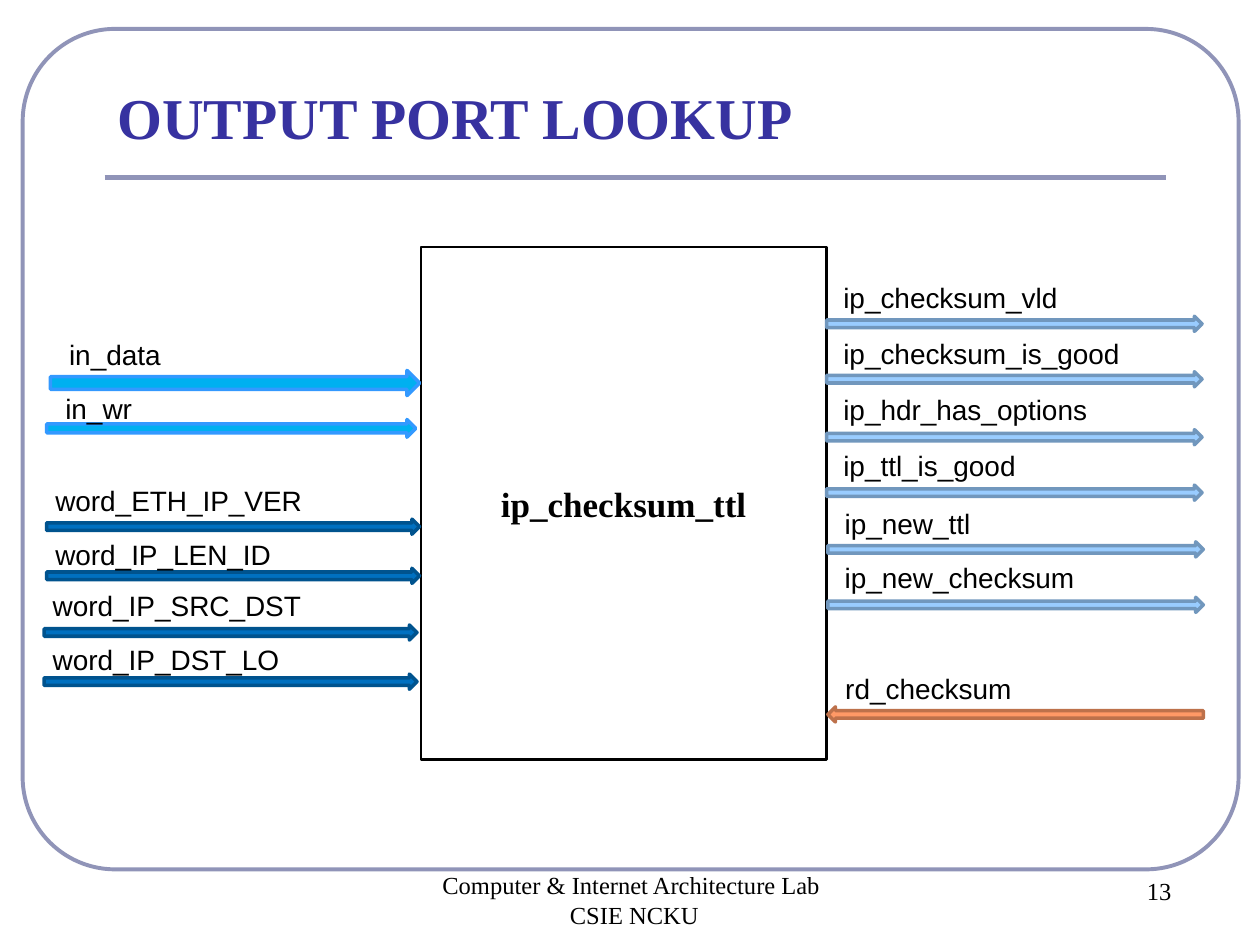
from dataclasses import dataclass

from pptx import Presentation
from pptx.dml.color import RGBColor
from pptx.enum.shapes import MSO_CONNECTOR, MSO_SHAPE
from pptx.enum.text import MSO_ANCHOR as Anchor, MSO_AUTO_SIZE as AutoSize, PP_ALIGN as Align
from pptx.oxml.ns import qn
from pptx.util import Inches, Pt
from lxml.etree import SubElement

# The slide is a grid of 100 columns by 75 rows of square cells.
CELL = Inches(0.1)
COLUMNS, ROWS = 100, 75

BLACK = RGBColor(0x00, 0x00, 0x00)
WHITE = RGBColor(0xFF, 0xFF, 0xFF)
FRAME = RGBColor(0x90, 0x94, 0xB8)
TITLE = RGBColor(0x37, 0x32, 0xA0)
SKY, SKY_EDGE = RGBColor(0x00, 0xB0, 0xF0), RGBColor(0x33, 0x99, 0xFF)
BLUE, BLUE_EDGE = RGBColor(0x00, 0x70, 0xC0), RGBColor(0x00, 0x53, 0x8E)
PALE, PALE_EDGE = RGBColor(0x99, 0xCC, 0xFF), RGBColor(0x71, 0x97, 0xBD)
ORANGE, ORANGE_EDGE = RGBColor(0xFF, 0x99, 0x66), RGBColor(0xBD, 0x71, 0x4B)

SERIF, SANS = "Times New Roman", "Arial"
TITLE_FONT = {"name": SERIF, "size": Pt(33), "bold": True}
MODULE_FONT = {"name": SERIF, "size": Pt(20), "bold": True}
FOOTER_FONT = {"name": SERIF, "size": Pt(14), "bold": False}
LABEL_FONT = {"name": SANS, "size": Pt(16), "bold": False}


@dataclass(frozen=True)
class Box:
    column: float
    row: float
    columns: float
    rows: float

    def lengths(self) -> list[int]:
        return [round(n * CELL) for n in (self.column, self.row, self.columns, self.rows)]


@dataclass(frozen=True)
class Bus:
    """Signals that share an arrow style; label_shift is measured from the arrow."""
    columns: float
    label_columns: float
    label_shift: float
    fill: RGBColor
    edge: RGBColor
    rotation: int = 0


@dataclass(frozen=True)
class Signal:
    name: str
    bus: Bus
    column: float
    row: float
    label_row: float
    rows: float = 1.2


DATA = Bus(29.3, 15.4, 0.5, SKY, SKY_EDGE)
WORD = Bus(29.6, 30.5, -0.3, BLUE, BLUE_EDGE)
RESULT = Bus(29.8, 29.3, 0.35, PALE, PALE_EDGE)
READ = Bus(29.8, 28.2, 0.4, ORANGE, ORANGE_EDGE, 180)

SIGNALS = [
    Signal("in_data", DATA, 4, 29.4, 26.3, 2),
    Signal("in_wr", DATA, 3.7, 33.3, 30.6, 1.4),
    Signal("word_ETH_IP_VER", WORD, 3.7, 41.2, 37.9),
    Signal("word_IP_LEN_ID", WORD, 3.7, 45.1, 42.2),
    Signal("word_IP_SRC_DST", WORD, 3.5, 49.6, 46.2),
    Signal("word_IP_DST_LO", WORD, 3.5, 53.5, 50.5),
    Signal("ip_checksum_vld", RESULT, 65.6, 25.1, 21.8),
    Signal("ip_checksum_is_good", RESULT, 65.6, 29.5, 26.2),
    Signal("ip_hdr_has_options", RESULT, 65.6, 34.1, 30.7),
    Signal("ip_ttl_is_good", RESULT, 65.6, 38.5, 35.1),
    Signal("ip_new_ttl", RESULT, 65.7, 43, 39.7),
    Signal("ip_new_checksum", RESULT, 65.7, 47.4, 44),
    Signal("rd_checksum", READ, 65.7, 56.1, 52.8),
]


def write(shape, lines: list[str], font: dict, color: RGBColor, align: Align, **frame_format) -> None:
    frame = shape.text_frame
    for name, value in {"word_wrap": True, "auto_size": AutoSize.NONE, **frame_format}.items():
        setattr(frame, name, value)
    frame.text = "\n".join(lines)
    for paragraph in frame.paragraphs:
        paragraph.alignment = align
        run_font = paragraph.runs[0].font
        for name, value in font.items():
            setattr(run_font, name, value)
        run_font.color.rgb = color


def add_outlined(slide, kind: MSO_SHAPE, box: Box, fill: RGBColor | None, edge: RGBColor, width: float):
    shape = slide.shapes.add_shape(kind, *box.lengths())
    shape.shadow.inherit = False
    if fill is None:
        shape.fill.background()
    else:
        shape.fill.solid()
        shape.fill.fore_color.rgb = fill
    shape.line.color.rgb = edge
    shape.line.width = Pt(width)
    return shape


def add_text(slide, box: Box, lines: list[str], font: dict, align: Align) -> None:
    write(slide.shapes.add_textbox(*box.lengths()), lines, font, BLACK, align)


def add_rule(slide, box: Box) -> None:
    left, top, width, height = box.lengths()
    rule = slide.shapes.add_connector(MSO_CONNECTOR.STRAIGHT, left, top, left + width, top + height)
    rule.line.color.rgb = FRAME
    rule.line.width = Pt(3)
    SubElement(rule._element.spPr, qn("a:effectLst"))


def add_title(slide, text: str) -> None:
    title = slide.shapes.title
    box = Box(8.3, 6, 84.2, 6.5)
    for name, value in zip(("left", "top", "width", "height"), box.lengths()):
        setattr(title, name, value)
    write(title, [text], TITLE_FONT, TITLE, Align.LEFT, vertical_anchor=Anchor.BOTTOM)


def add_signal(slide, signal: Signal) -> None:
    bus = signal.bus
    arrow_box = Box(signal.column, signal.row, bus.columns, signal.rows)
    arrow = add_outlined(slide, MSO_SHAPE.RIGHT_ARROW, arrow_box, bus.fill, bus.edge, 2)
    arrow.rotation = bus.rotation
    label_box = Box(signal.column + bus.label_shift, signal.label_row, bus.label_columns, 3.7)
    add_text(slide, label_box, [signal.name], LABEL_FONT, Align.LEFT)


def main() -> None:
    presentation = Presentation()
    presentation.slide_width = COLUMNS * CELL
    presentation.slide_height = ROWS * CELL
    slide = presentation.slides.add_slide(presentation.slide_layouts[5])

    frame = add_outlined(slide, MSO_SHAPE.ROUNDED_RECTANGLE, Box(1.8, 2.3, 96.5, 66.7), None, FRAME, 2.25)
    frame.adjustments[0] = 0.11
    add_rule(slide, Box(8.3, 14.1, 84.2, 0))
    add_title(slide, "OUTPUT PORT LOOKUP")
    add_text(slide, Box(28.7, 68.6, 43.3, 5),
             ["Computer & Internet Architecture Lab ", "CSIE NCKU"], FOOTER_FONT, Align.CENTER)
    add_text(slide, Box(86.6, 69, 10.8, 5), ["13"], FOOTER_FONT, Align.CENTER)

    module = add_outlined(slide, MSO_SHAPE.RECTANGLE, Box(33.4, 19.6, 32.2, 40.7), WHITE, BLACK, 1.5)
    margins = dict.fromkeys(("margin_left", "margin_top", "margin_right", "margin_bottom"), 0)
    write(module, ["ip_checksum_ttl"], MODULE_FONT, BLACK, Align.CENTER,
          vertical_anchor=Anchor.MIDDLE, **margins)
    for signal in SIGNALS:
        add_signal(slide, signal)

    presentation.save("out.pptx")


if __name__ == "__main__":
    main()
